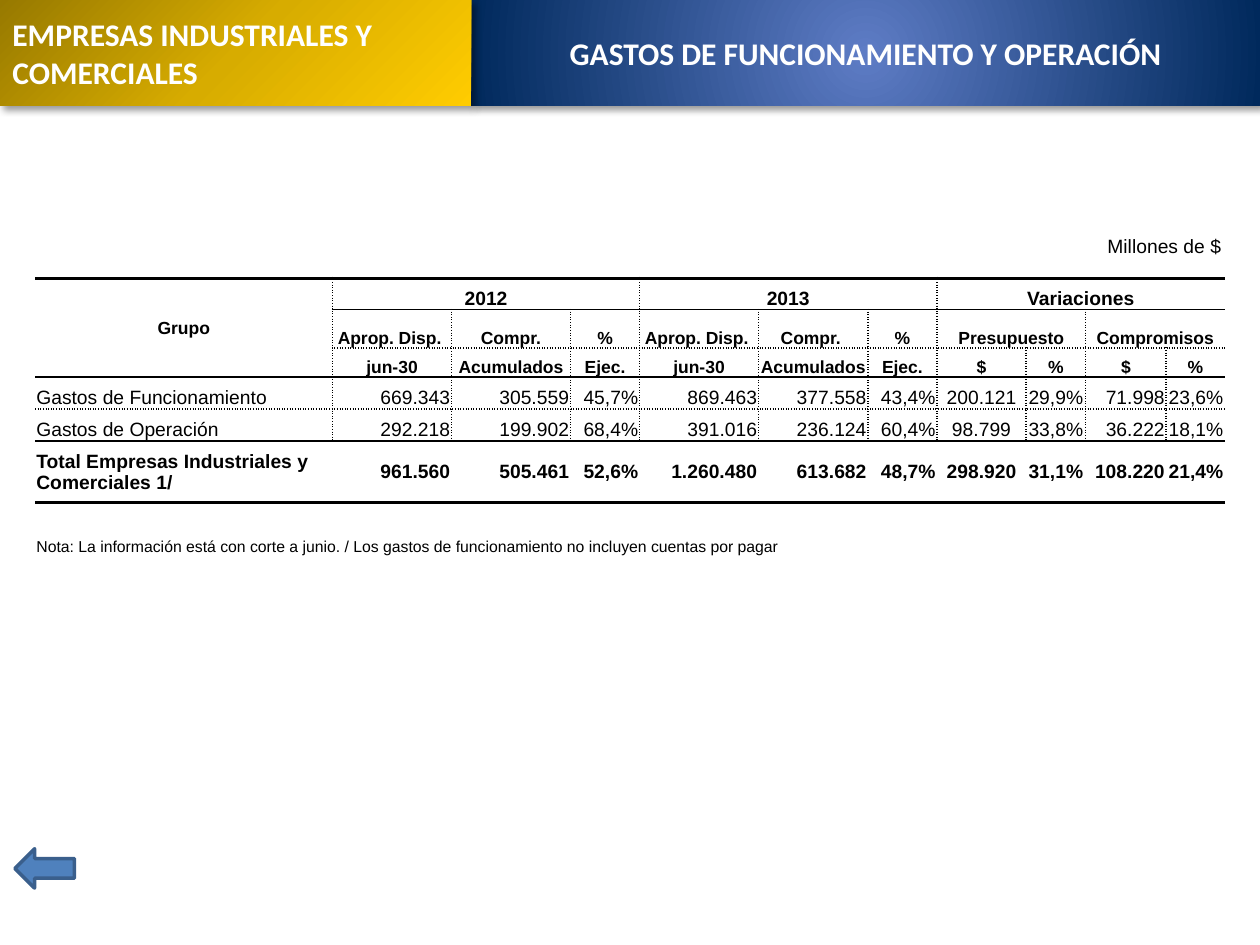
"""Build the slide on operating expenses of industrial and commercial companies."""
from dataclasses import dataclass

from lxml.etree import _Element
from pptx import Presentation
from pptx.dml.color import RGBColor
from pptx.enum.shapes import MSO_SHAPE
from pptx.enum.text import MSO_ANCHOR, MSO_AUTO_SIZE, PP_ALIGN
from pptx.oxml import parse_xml
from pptx.oxml.ns import nsdecls, qn
from pptx.util import Pt

COLORS = {
    "white": "FFFFFF", "black": "000000",
    "blue_light": "5E7CC5", "blue_dark": "00295C",
    "gold_dark": "977900", "gold_mid": "D7AC00", "gold_light": "FFCC00",
    "arrow": "4F81BD", "arrow_edge": "3A5F8C",
}
BANNER_SPLIT, BANNER_HEIGHT = 269.25, 60.5
NO_GRID_STYLE = "{2D5ABB26-0587-4C30-8999-92F81FD0307C}"
COLUMN_WIDTHS = [170, 68, 68, 39.5, 68, 62.5, 39.5, 51, 34, 46, 33.5]
ROW_HEIGHTS = [18, 22, 16.5, 18.25, 18.25, 35]
THIN, THICK, DOTTED = (1, "solid"), (2, "solid"), (1, "sysDot")
ROW_LINES = [THICK, THIN, DOTTED, THIN, DOTTED, THIN, THICK]
TOTAL_ROW = len(ROW_HEIGHTS) - 1
CENTERED_COLUMNS = (7, 8)


@dataclass
class Banner:
    text: str
    left: float
    width: float
    align: PP_ALIGN
    stops: list[tuple[int, str]]
    focus: tuple[int, int, int, int]


@dataclass
class TableCell:
    row: int
    column: int
    text: str
    rows: int = 1
    columns: int = 1
    size: float = 10
    bold: bool = True
    align: PP_ALIGN = PP_ALIGN.CENTER
    anchor: MSO_ANCHOR = MSO_ANCHOR.BOTTOM


TITLE = Banner("GASTOS DE FUNCIONAMIENTO Y OPERACIÓN", BANNER_SPLIT, 720 - BANNER_SPLIT,
               PP_ALIGN.CENTER, [(0, "blue_light"), (100, "blue_dark")], (50, 50, 50, 50))
SECTION = Banner("EMPRESAS INDUSTRIALES Y COMERCIALES", 0, BANNER_SPLIT, PP_ALIGN.LEFT,
                 [(0, "gold_dark"), (50, "gold_mid"), (100, "gold_light")], (0, 0, 100, 100))
GROUP_HEADERS = [
    TableCell(0, 0, "Grupo", rows=3, anchor=MSO_ANCHOR.MIDDLE),
    TableCell(0, 1, "2012", columns=3, size=11),
    TableCell(0, 4, "2013", columns=3, size=11),
    TableCell(0, 7, "Variaciones", columns=4, size=11),
    TableCell(1, 7, "Presupuesto", columns=2),
    TableCell(1, 9, "Compromisos", columns=2),
]
COLUMN_HEADERS = {
    1: ["Aprop. Disp. ", "Compr.", "%", "Aprop. Disp. ", "Compr. ", "%"],
    2: ["jun-30", "Acumulados", "Ejec."] * 2 + ["$", "%"] * 2,
}
EXPENSES = {
    3: ["Gastos de Funcionamiento", "669.343", "305.559", "45,7%", "869.463", "377.558",
        "43,4%", "200.121", "29,9%", "71.998", "23,6%"],
    4: ["Gastos de Operación", "292.218", "199.902", "68,4%", "391.016", "236.124",
        "60,4%", "98.799", "33,8%", "36.222", "18,1%"],
    5: ["Total Empresas Industriales y Comerciales 1/", "961.560", "505.461", "52,6%",
        "1.260.480", "613.682", "48,7%", "298.920", "31,1%", "108.220", "21,4%"],
}


def rgb(name: str) -> RGBColor:
    return RGBColor.from_string(COLORS[name])


def write(frame, text: str, *, size: float, font: str = "Arial", color: str = "black",
          bold: bool = False, align: PP_ALIGN = PP_ALIGN.LEFT) -> None:
    para = frame.paragraphs[0]
    para.alignment = align
    span = para.add_run()
    span.text = text
    span.font.name, span.font.size, span.font.bold = font, Pt(size), bold
    span.font.color.rgb = rgb(color)


def format_banner(shape, banner: Banner) -> None:
    shape.left, shape.top = Pt(banner.left), Pt(0)
    shape.width, shape.height = Pt(banner.width), Pt(BANNER_HEIGHT)
    stops = "".join(f'<a:gs pos="{place * 1000}"><a:srgbClr val="{COLORS[name]}"/></a:gs>'
                    for place, name in banner.stops)
    left, top, right, bottom = (edge * 1000 for edge in banner.focus)
    properties = shape._element.spPr
    for markup in (
        f'<a:gradFill {nsdecls("a")}><a:gsLst>{stops}</a:gsLst><a:path path="circle">'
        f'<a:fillToRect l="{left}" t="{top}" r="{right}" b="{bottom}"/></a:path></a:gradFill>',
        f'<a:ln {nsdecls("a")}><a:noFill/></a:ln>',
        f'<a:effectLst {nsdecls("a")}><a:outerShdw blurRad="{Pt(4)}" dist="{Pt(3)}" '
        f'dir="2700000" algn="tl"><a:srgbClr val="{COLORS["black"]}"><a:alpha val="40000"/>'
        f'</a:srgbClr></a:outerShdw></a:effectLst>',
    ):
        properties.append(parse_xml(markup))
    frame = shape.text_frame
    frame.word_wrap = True
    frame.auto_size = MSO_AUTO_SIZE.NONE
    frame.vertical_anchor = MSO_ANCHOR.MIDDLE
    write(frame, banner.text, size=18, font="Calibri", color="white", bold=True,
          align=banner.align)


def border(side: str, line: tuple[float, str]) -> _Element:
    width, dash = line
    return parse_xml(
        f'<a:ln{side} {nsdecls("a")} w="{Pt(width)}"><a:solidFill>'
        f'<a:srgbClr val="{COLORS["black"]}"/></a:solidFill>'
        f'<a:prstDash val="{dash}"/></a:ln{side}>')


def draw_cell(table, item: TableCell) -> None:
    cell = table.cell(item.row, item.column)
    end_row, end_column = item.row + item.rows, item.column + item.columns
    if item.rows * item.columns > 1:
        cell.merge(table.cell(end_row - 1, end_column - 1))
    cell.margin_left = cell.margin_right = cell.margin_top = Pt(0.75)
    cell.margin_bottom = Pt(0)
    cell.vertical_anchor = item.anchor
    cell.fill.solid()
    cell.fill.fore_color.rgb = rgb("white")
    write(cell.text_frame, item.text, size=item.size, bold=item.bold, align=item.align)
    lines = {}
    if item.row != TOTAL_ROW:
        if item.column > 0:
            lines["L"] = DOTTED
        if end_column < len(COLUMN_WIDTHS):
            lines["R"] = DOTTED
    lines["T"], lines["B"] = ROW_LINES[item.row], ROW_LINES[end_row]
    properties = cell._tc.get_or_add_tcPr()
    for position, (side, line) in enumerate(lines.items()):
        properties.insert(position, border(side, line))


def expense_cell(row: int, column: int, text: str) -> TableCell:
    total = row == TOTAL_ROW
    align = PP_ALIGN.LEFT if column == 0 else PP_ALIGN.RIGHT
    if column in CENTERED_COLUMNS:
        align = PP_ALIGN.CENTER
    return TableCell(row, column, text, size=11, bold=total, align=align,
                     anchor=MSO_ANCHOR.MIDDLE if total else MSO_ANCHOR.BOTTOM)


def draw_table(page) -> None:
    table = page.shapes.add_table(
        len(ROW_HEIGHTS), len(COLUMN_WIDTHS), Pt(20), Pt(159),
        Pt(sum(COLUMN_WIDTHS)), Pt(sum(ROW_HEIGHTS))).table
    table.first_row = table.horz_banding = False
    table._tbl.tblPr.find(qn("a:tableStyleId")).text = NO_GRID_STYLE
    for column, width in zip(table.columns, COLUMN_WIDTHS):
        column.width = Pt(width)
    for row, height in zip(table.rows, ROW_HEIGHTS):
        row.height = Pt(height)
    cells = GROUP_HEADERS + [
        TableCell(row, column, text)
        for row, texts in COLUMN_HEADERS.items() for column, text in enumerate(texts, 1)
    ] + [
        expense_cell(row, column, text)
        for row, texts in EXPENSES.items() for column, text in enumerate(texts)
    ]
    for item in cells:
        draw_cell(table, item)


def draw_label(page, text: str, left: float, top: float, width: float, height: float,
               size: float) -> None:
    frame = page.shapes.add_textbox(Pt(left), Pt(top), Pt(width), Pt(height)).text_frame
    frame.word_wrap = False
    frame.auto_size = MSO_AUTO_SIZE.SHAPE_TO_FIT_TEXT
    write(frame, text, size=size)


def draw_back_arrow(page) -> None:
    arrow = page.shapes.add_shape(MSO_SHAPE.LEFT_ARROW, Pt(8.5), Pt(485), Pt(34), Pt(22.5))
    arrow.shadow.inherit = False
    arrow.fill.solid()
    arrow.fill.fore_color.rgb = rgb("arrow")
    arrow.line.color.rgb = rgb("arrow_edge")
    arrow.line.width = Pt(2)


def main() -> None:
    deck = Presentation()
    deck.slide_width, deck.slide_height = Pt(720), Pt(540)
    page = deck.slides.add_slide(deck.slide_layouts[5])
    format_banner(page.shapes.title, TITLE)
    format_banner(page.shapes.add_shape(MSO_SHAPE.RECTANGLE, 0, 0, 0, 0), SECTION)
    draw_back_arrow(page)
    draw_table(page)
    draw_label(page, "Millones de $", 625.75, 130.25, 80, 20.5, 11)
    draw_label(page, "Nota: La información está con corte a junio. / Los gastos de "
               "funcionamiento no incluyen cuentas por pagar", 13.75, 303.25, 442, 18, 9)
    deck.save("out.pptx")


if __name__ == "__main__":
    main()
